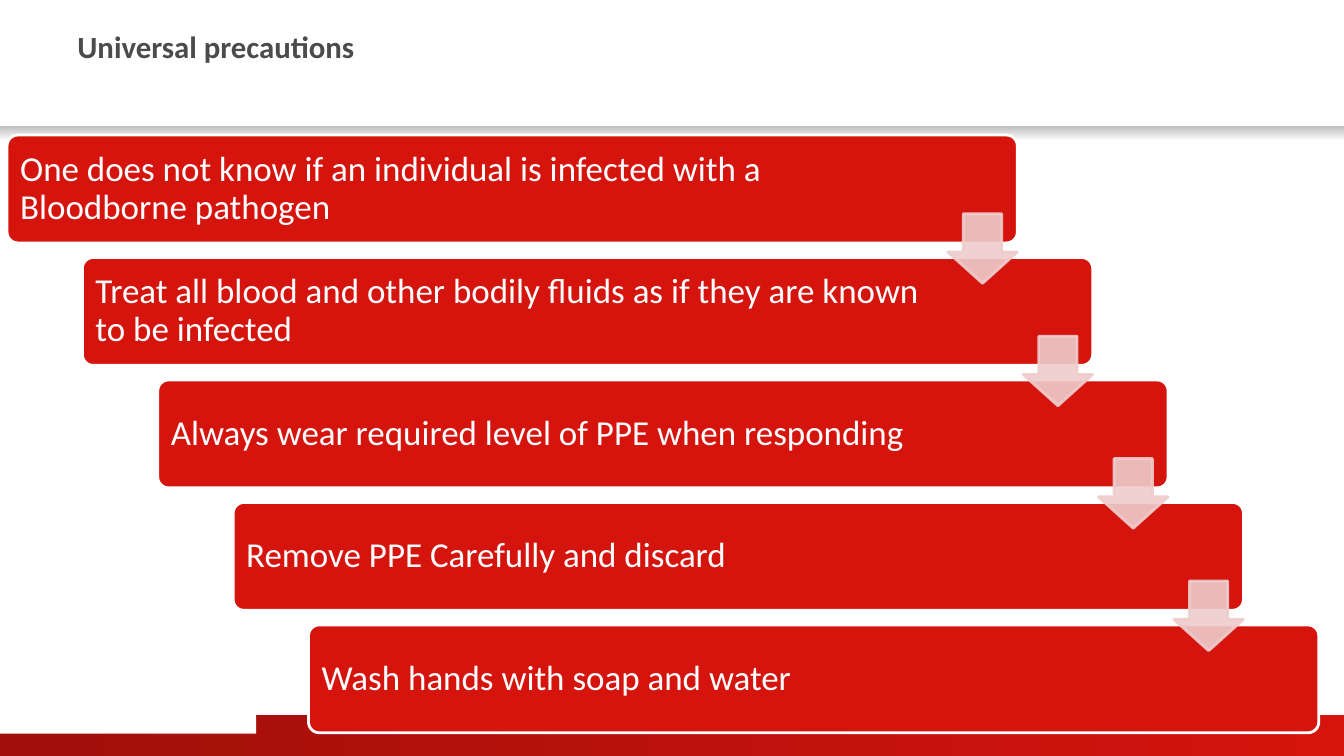
import pptx
import pptx.util
import pptx.dml.color
import pptx.enum.shapes
import pptx.enum.text
import pptx.oxml.ns
from lxml import etree

Inches = pptx.util.Inches
Pt = pptx.util.Pt
RGBColor = pptx.dml.color.RGBColor
MSO_SHAPE = pptx.enum.shapes.MSO_SHAPE
MSO_ANCHOR = pptx.enum.text.MSO_ANCHOR
PP_ALIGN = pptx.enum.text.PP_ALIGN
qn = pptx.oxml.ns.qn

WHITE = RGBColor(0xFF, 0xFF, 0xFF)
RED = RGBColor(0xD5, 0x14, 0x0D)
DARK_RED = RGBColor(0xA0, 0x0F, 0x0A)
PINK = RGBColor(0xEF, 0xCC, 0xCC)
GREY = RGBColor(0xBE, 0xBE, 0xBE)
TITLE_GREY = RGBColor(0x4B, 0x4B, 0x4B)

FONT = "Calibri"
STEPS = [
    "One does not know if an individual is infected with a Bloodborne pathogen",
    "Treat all blood and other bodily fluids as if they are known to be infected",
    "Always wear required level of PPE when responding",
    "Remove PPE Carefully and discard",
    "Wash hands with soap and water",
]
STEP_X = 0.7475
STEP_Y = 1.215


def add_shape(s, kind, left, top, width, height, color=None):
    sp = s.shapes.add_shape(
        kind, Inches(left), Inches(top), Inches(width), Inches(height))
    sp.shadow.inherit = False
    sp.line.fill.background()
    if color is not None:
        sp.fill.solid()
        sp.fill.fore_color.rgb = color
    return sp


def add_gradient_band(s, top, height, start, end, angle):
    sp = add_shape(s, MSO_SHAPE.RECTANGLE, 0, top, 13.33, height)
    sp.fill.gradient()
    sp.fill.gradient_angle = angle
    for stop, color in zip(sp.fill.gradient_stops, (start, end)):
        stop.color.rgb = color


def style_paragraph(p, text, size, color, spacing, bold=False):
    p.text = text
    p.alignment = PP_ALIGN.LEFT
    p.line_spacing = spacing
    p.font.name = FONT
    p.font.size = Pt(size)
    p.font.bold = bold
    p.font.color.rgb = color


def set_outline(sp, color):
    sp.line.color.rgb = color
    sp.line.width = Pt(2)


def add_title(s, text):
    sp = s.shapes.add_textbox(
        Inches(0.67), Inches(0.25), Inches(12), Inches(1))
    tf = sp.text_frame
    tf.word_wrap = True
    style_paragraph(tf.paragraphs[0], text, 22, TITLE_GREY, 0.95, bold=True)


def add_step(s, left, top, text):
    sp = add_shape(s, MSO_SHAPE.ROUNDED_RECTANGLE, left, top, 10.02, 1.07, RED)
    sp.adjustments[0] = 0.1
    set_outline(sp, WHITE)
    tf = sp.text_frame
    tf.word_wrap = True
    tf.vertical_anchor = MSO_ANCHOR.MIDDLE
    tf.margin_left = tf.margin_top = tf.margin_bottom = Inches(0.1)
    tf.margin_right = Inches(1.55)
    style_paragraph(tf.paragraphs[0], text, 25, WHITE, 0.9)


def add_arrow(s, left, top):
    sp = add_shape(s, MSO_SHAPE.DOWN_ARROW, left, top, 0.69, 0.69, PINK)
    sp.adjustments[0] = 0.55
    sp.adjustments[1] = 0.45
    set_outline(sp, PINK)
    for color in sp.fill._xPr.iter(qn("a:srgbClr")):
        etree.SubElement(color, qn("a:alpha"), val="90000")


def main():
    prs = pptx.Presentation()
    prs.slide_width = Inches(13.33)
    prs.slide_height = Inches(7.5)
    s = prs.slides.add_slide(prs.slide_layouts[6])

    add_gradient_band(s, 7.09, 0.41, DARK_RED, RED, 0)
    add_shape(s, MSO_SHAPE.RECTANGLE, 0, 6.78, 2.54, 0.5, WHITE)
    add_gradient_band(s, 1.25, 0.15, GREY, WHITE, 270)
    add_title(s, "Universal precautions")

    for i, text in enumerate(STEPS):
        add_step(s, 0.07 + i * STEP_X, 1.34 + i * STEP_Y, text)
    for i in range(len(STEPS) - 1):
        add_arrow(s, 9.4 + i * STEP_X, 2.12 + i * STEP_Y)

    prs.save("out.pptx")


if __name__ == "__main__":
    main()
